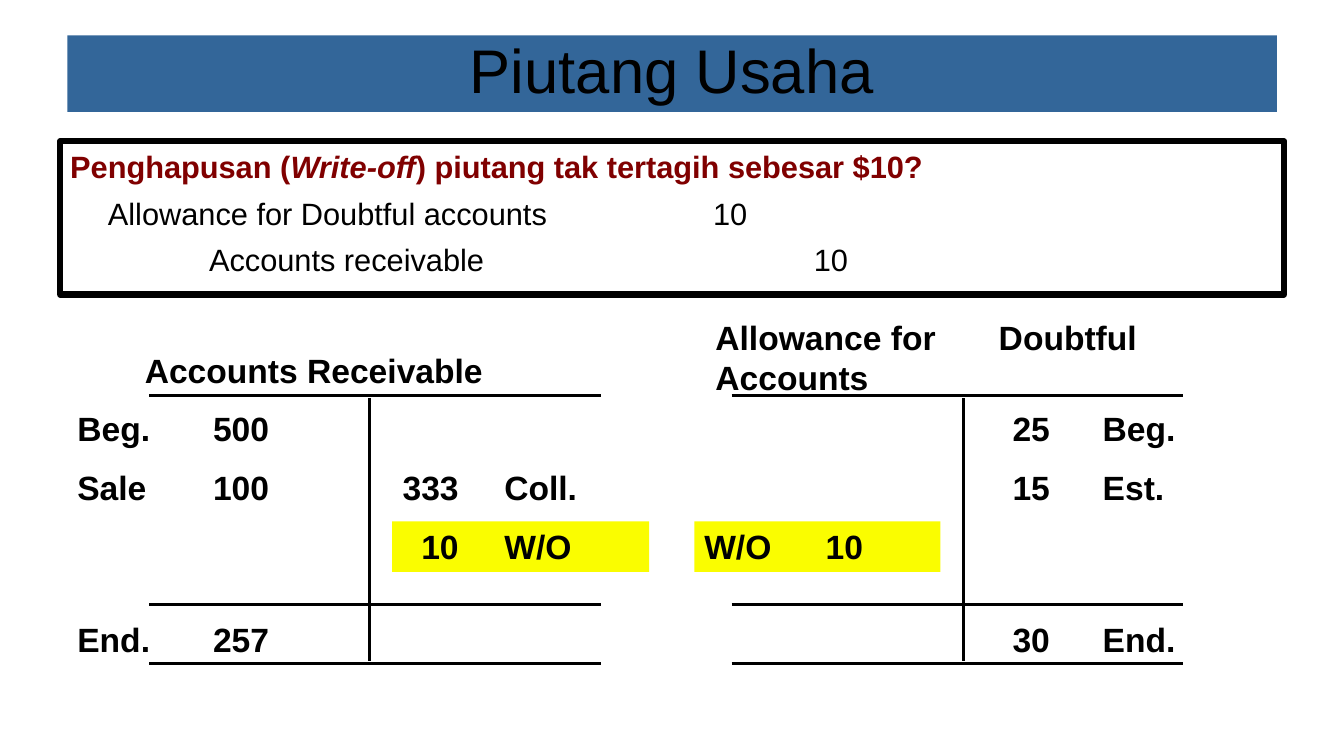
"""Builds the slide on writing off an uncollectible receivable."""
from lxml import etree
from pptx import Presentation
from pptx import util as u
from pptx.dml.color import RGBColor
from pptx.enum import shapes, text
from pptx.oxml.ns import qn

COLORS = {"ink": "000000", "paper": "FFFFFF", "title": "336699",
          "question": "800000", "highlight": "FAFD00"}
ROW_TOPS = {"first": 0.2, "second": 1.69, "third": 3.18, "ending": 5.5}
OUTER_TABS = [("l", 3.42)]
COLLECTION_TABS = [("r", 1.43), ("l", 2.58)]
ALLOWANCE_TABS = [("r", 1.65), ("l", 2.98)]
WRITE_OFF_TABS = [("l", 3.06)]
JOURNAL_TABS = [("l", 0.95), ("l", 3.5), ("l", 16.2), ("l", 18.74)]


def color(name):
    """Return the named colour."""
    return RGBColor.from_string(COLORS[name])


def add_box(slide, box, fill=None, line=None):
    """Add a rectangle with an optional fill and outline width."""
    shape = slide.shapes.add_shape(shapes.MSO_SHAPE.RECTANGLE, *map(u.Cm, box))
    shape.shadow.inherit = False
    if fill:
        shape.fill.solid()
        shape.fill.fore_color.rgb = color(fill)
    else:
        shape.fill.background()
    if line:
        shape.line.color.rgb = color("ink")
        shape.line.width = u.Pt(line)
    else:
        shape.line.fill.background()
    return shape


def add_label(slide, box, content, fill=None):
    """Add a text box with an optional fill."""
    shape = slide.shapes.add_textbox(*map(u.Cm, box))
    if fill:
        shape.fill.solid()
        shape.fill.fore_color.rgb = color(fill)
    return shape


def write(paragraph, content, size=24, bold=True, italic=False, ink="ink",
          tabs=(), align=text.PP_ALIGN.LEFT, spacing=None, before=None):
    """Add a formatted run and set the format of its paragraph."""
    run = paragraph.add_run()
    run.text = content
    run.font.name = "Arial"
    run.font.size = u.Pt(size)
    run.font.bold = bold
    run.font.italic = italic
    run.font.color.rgb = color(ink)
    paragraph.alignment = align
    if spacing:
        paragraph.line_spacing = spacing
    if before:
        paragraph.space_before = u.Pt(before)
    if tabs:
        stops = etree.SubElement(paragraph._p.get_or_add_pPr(), qn("a:tabLst"))
        for side, position in tabs:
            etree.SubElement(stops, qn("a:tab"), pos=str(u.Cm(position)), algn=side)


def add_entry(slide, box, content, tabs=(), fill=None):
    """Add a bold line of an account."""
    frame = add_label(slide, box, content, fill).text_frame
    frame.word_wrap = True
    write(frame.paragraphs[0], content, tabs=tabs)


def add_rule(slide, start, end):
    """Draw a straight black line."""
    rule = slide.shapes.add_connector(
        shapes.MSO_CONNECTOR.STRAIGHT, *map(u.Cm, start + end))
    rule.line.color.rgb = color("ink")
    rule.line.width = u.Pt(2)
    etree.SubElement(rule._element.spPr, qn("a:effectLst"))


def add_title(slide, box):
    """Place the title band."""
    frame = add_box(slide, box, fill="title").text_frame
    frame.vertical_anchor = text.MSO_ANCHOR.MIDDLE
    write(frame.paragraphs[0], "Piutang Usaha", size=44, bold=False,
          align=text.PP_ALIGN.CENTER, spacing=0.9)


def add_journal(slide, box):
    """Place the framed question and its journal entry."""
    frame = add_box(slide, box, fill="paper", line=4.5).text_frame
    frame.word_wrap = True
    frame.vertical_anchor = text.MSO_ANCHOR.TOP
    layout = {"size": 22, "spacing": 1.05, "before": 5.3}
    question = frame.paragraphs[0]
    for content, italic in (("Penghapusan (", False), ("Write-off", True),
                            (") piutang tak tertagih sebesar $10?", False)):
        write(question, content, italic=italic, ink="question", **layout)
    for content in ("\tAllowance for Doubtful accounts\t10",
                    "\t\tAccounts receivable\t\t10"):
        write(frame.add_paragraph(), content, bold=False, tabs=JOURNAL_TABS, **layout)


def add_account(slide, box, stem, heading, entries):
    """Draw a T-account with its heading and entries, offset from the box."""
    left, top, width, height = box
    for y in (top, top + height - 1.48, top + height):
        add_rule(slide, (left, y), (left + width, y))
    add_rule(slide, (left + stem, top + 0.07), (left + stem, top + height - 0.05))
    content, x, y, tabs = heading
    add_entry(slide, (left + x, top + y, 12.98, 1.27), content, tabs)
    for row, x, entry_width, content, tabs, fill in entries:
        add_entry(slide, (left + x, top + ROW_TOPS[row], entry_width, 1.27),
                  content, tabs, fill)


def main():
    """Build and save the slide."""
    presentation = Presentation()
    presentation.slide_width = u.Cm(33.87)
    presentation.slide_height = u.Cm(19.05)
    slide = presentation.slides.add_slide(presentation.slide_layouts[6])
    add_account(
        slide, (3.76, 9.96, 11.38, 6.75), 5.56,
        ("Accounts Receivable", -0.36, -1.27, ()),
        [("first", -2.06, 7.32, "Beg.\t500", OUTER_TABS, None),
         ("second", -2.06, 7.32, "Sale\t100", OUTER_TABS, None),
         ("ending", -2.06, 7.32, "End.\t257", OUTER_TABS, None),
         ("second", 6.12, 6.76, "\t333\tColl.", COLLECTION_TABS, None),
         ("third", 6.12, 6.48, "\t10\tW/O", COLLECTION_TABS, "highlight")])
    add_account(
        slide, (18.44, 9.96, 11.38, 6.75), 5.84,
        ("Allowance for\tDoubtful Accounts", -0.66, -2.11, [("l", 7.14)]),
        [("first", 6.12, 7.32, "\t25\tBeg.", ALLOWANCE_TABS, None),
         ("second", 6.12, 7.32, "\t15\tEst.", ALLOWANCE_TABS, None),
         ("ending", 6.12, 7.32, "\t30\tEnd.", ALLOWANCE_TABS, None),
         ("third", -0.94, 6.2, "W/O\t10", WRITE_OFF_TABS, "highlight")])
    add_journal(slide, (1.52, 3.56, 30.84, 3.86))
    add_title(slide, (1.7, 0.89, 30.48, 1.93))
    presentation.save("out.pptx")


if __name__ == "__main__":
    main()
